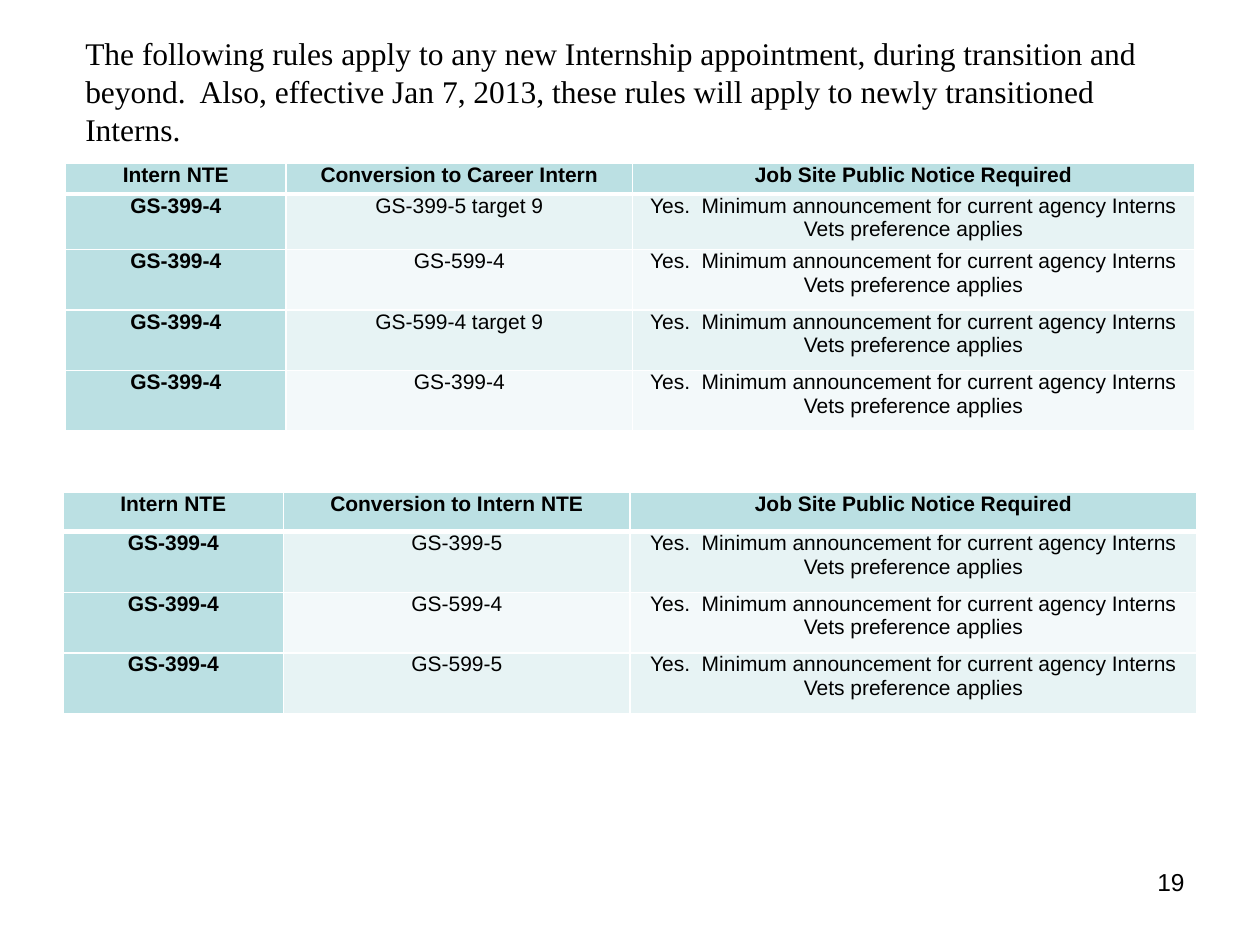
from lxml import etree
from pptx import Presentation
from pptx.dml.color import RGBColor
from pptx.enum import text
from pptx.oxml.ns import qn
from pptx.util import Cm, Pt

BLACK = RGBColor(0x00, 0x00, 0x00)
WHITE = RGBColor(0xFF, 0xFF, 0xFF)
TEAL = RGBColor(0xBB, 0xE0, 0xE3)
BANDS = [RGBColor(0xF3, 0xF9, 0xFA), RGBColor(0xE7, 0xF3, 0xF4)]

INTERN = "GS-399-4"
NOTICE = "Yes.  Minimum announcement for current agency Interns\nVets preference applies"
NOTICE_HEADING = "Job Site Public Notice Required"

RULES = [
    {
        "left": 1.32, "top": 3.3,
        "widths": [4.45, 6.98, 11.33],
        "heights": [0.61, 1.12, 1.22, 1.22, 1.22],
        "heading": "Conversion to Career Intern",
        "conversions": ["GS-399-5 target 9", "GS-599-4", "GS-599-4 target 9", "GS-399-4"],
    },
    {
        "left": 1.27, "top": 9.93,
        "widths": [4.45, 6.98, 11.43],
        "heights": [0.79, 1.22, 1.22, 1.22],
        "heading": "Conversion to Intern NTE",
        "conversions": ["GS-399-5", "GS-599-4", "GS-599-5"],
    },
]


def format_font(paragraph, **values):
    paragraph.font.color.rgb = BLACK
    for name, value in values.items():
        setattr(paragraph.font, name, value)


def add_border(cell, side, points):
    """Draw one white cell edge; call in the order L, R, T, B and before the fill."""
    line = etree.SubElement(cell._tc.get_or_add_tcPr(), qn(f"a:ln{side}"), w=str(Pt(points)))
    fill = etree.SubElement(line, qn("a:solidFill"))
    etree.SubElement(fill, qn("a:srgbClr"), val=str(WHITE))


prs = Presentation()
prs.slide_width, prs.slide_height = Cm(25.4), Cm(19.05)
slide = prs.slides.add_slide(prs.slide_layouts[6])

intro = slide.shapes.add_textbox(Cm(1.47), Cm(0.56), Cm(22.43), Cm(1.8)).text_frame
intro.word_wrap = True
intro.auto_size = text.MSO_AUTO_SIZE.SHAPE_TO_FIT_TEXT
intro.text = (
    "The following rules apply to any new Internship appointment, during transition and "
    "beyond.  Also, effective Jan 7, 2013, these rules will apply to newly transitioned Interns."
)
format_font(intro.paragraphs[0], name="Times New Roman", size=Pt(18))

for rule in RULES:
    rows = [["Intern NTE", rule["heading"], NOTICE_HEADING]]
    rows += [[INTERN, conversion, NOTICE] for conversion in rule["conversions"]]
    table = slide.shapes.add_table(
        len(rows), 3, Cm(rule["left"]), Cm(rule["top"]),
        Cm(sum(rule["widths"])), Cm(sum(rule["heights"])),
    ).table
    for column, width in zip(table.columns, rule["widths"]):
        column.width = Cm(width)
    for row, height in zip(table.rows, rule["heights"]):
        row.height = Cm(height)

    for r, words in enumerate(rows):
        for c, wording in enumerate(words):
            cell = table.cell(r, c)
            heading = r == 0 or c == 0
            cell.margin_left = cell.margin_right = Cm(0.18)
            cell.margin_top = cell.margin_bottom = 0
            for side in "LRTB":
                under_header = (r, side) in [(0, "B"), (1, "T")]
                add_border(cell, side, 3 if under_header else 1)
            cell.fill.solid()
            cell.fill.fore_color.rgb = TEAL if heading else BANDS[r % 2]
            cell.text = wording
            for paragraph in cell.text_frame.paragraphs:
                paragraph.alignment = text.PP_ALIGN.CENTER
                format_font(paragraph, name="Arial", size=Pt(12), bold=heading)

page_number = slide.shapes.add_textbox(Cm(18.21), Cm(17.35), Cm(5.92), Cm(1.32)).text_frame
page_number.word_wrap = True
page_number.text = "19"
page_number.paragraphs[0].alignment = text.PP_ALIGN.RIGHT
format_font(page_number.paragraphs[0], name="Arial", size=Pt(14))

prs.save("out.pptx")
